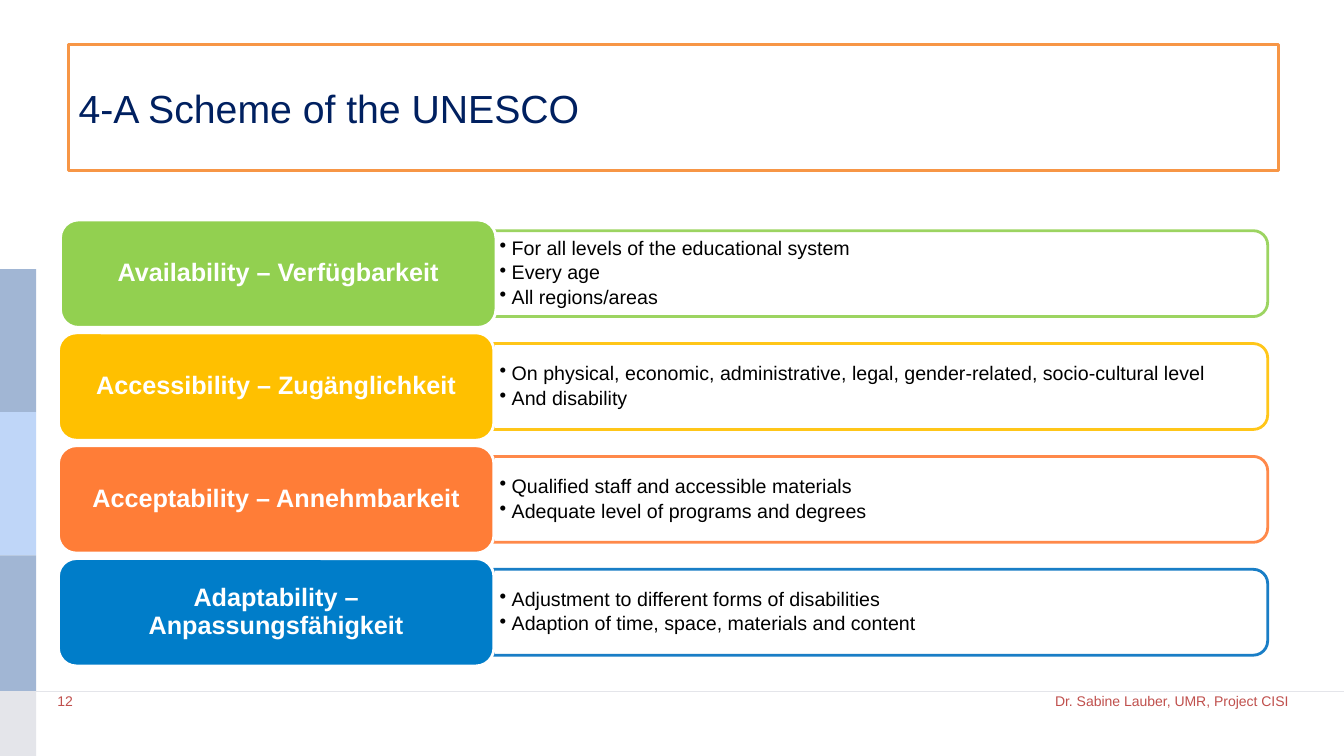
from dataclasses import dataclass
from itertools import pairwise

from lxml.etree import SubElement
from pptx import Presentation
from pptx.dml.color import RGBColor
from pptx.enum.shapes import MSO_CONNECTOR, MSO_SHAPE
from pptx.enum.text import MSO_ANCHOR, PP_ALIGN
from pptx.oxml.ns import qn
from pptx.util import Inches, Pt

FONT = "Arial"
WIDTH, HEIGHT = Inches(13.33), Inches(7.5)


@dataclass(frozen=True)
class Area:
    """A rectangle in percent of the slide's width and height."""
    left: float
    top: float
    width: float
    height: float

    def lengths(self) -> tuple[int, int, int, int]:
        return (across(self.left), down(self.top), across(self.width), down(self.height))


@dataclass(frozen=True)
class Scheme:
    label: str
    points: tuple[str, ...]
    fill: str
    outline: str
    label_left: float = 4.35


SCHEMES = (
    Scheme("Availability – Verfügbarkeit",
           ("For all levels of the educational system", "Every age", "All regions/areas"),
           "92D050", "92D050", 4.5),
    Scheme("Accessibility – Zugänglichkeit",
           ("On physical, economic, administrative, legal, gender-related, socio-cultural level",
            "And disability"),
           "FFC000", "FFC000"),
    Scheme("Acceptability – Annehmbarkeit",
           ("Qualified staff and accessible materials", "Adequate level of programs and degrees"),
           "FF7D37", "FF7D37"),
    Scheme("Adaptability – Anpassungsfähigkeit",
           ("Adjustment to different forms of disabilities",
            "Adaption of time, space, materials and content"),
           "007DC9", "0070C0"),
)
FIRST_MIDDLE, ROW_PITCH = 36.2, 14.93
LABEL_HEIGHT, FRAME_HEIGHT, POINTS_HEIGHT = 14.2, 11.36, 10.3


def across(percent: float) -> int:
    return round(WIDTH * percent / 100)


def down(percent: float) -> int:
    return round(HEIGHT * percent / 100)


def color(value: str) -> RGBColor:
    return RGBColor.from_string(value)


def add_block(page, kind, lengths, fill=None, outline=None, weight=2):
    block = page.shapes.add_shape(kind, *lengths)
    block.shadow.inherit = False
    if fill:
        block.fill.solid()
        block.fill.fore_color.rgb = color(fill)
    else:
        block.fill.background()
    if outline:
        block.line.color.rgb = color(outline)
        block.line.width = Pt(weight)
    else:
        block.line.fill.background()
    return block


def set_margins(frame, side: float, end: float) -> None:
    frame.margin_left = frame.margin_right = Inches(side)
    frame.margin_top = frame.margin_bottom = Inches(end)


def style(para, size: float, ink: str, bold: bool = False, align=PP_ALIGN.LEFT) -> None:
    para.alignment = align
    para.font.name = FONT
    para.font.size = Pt(size)
    para.font.bold = bold
    para.font.color.rgb = color(ink)


def add_bullet(para) -> None:
    properties = para._p.get_or_add_pPr()
    properties.set("marL", str(Inches(0.12)))
    properties.set("indent", str(-Inches(0.12)))
    SubElement(properties, qn("a:buChar")).set("char", "•")


def add_text(page, area: Area):
    box = page.shapes.add_textbox(*area.lengths())
    box.text_frame.word_wrap = True
    return box.text_frame


def draw_sidebar(page) -> None:
    edges = (35.6, 54.53, 73.47, 91.47, 100)
    fills = ("A1B6D4", "BFD6F8", "A1B6D4", "E4E5EA")
    for (top, bottom), fill in zip(pairwise(edges), fills):
        add_block(page, MSO_SHAPE.RECTANGLE, Area(0, top, 2.7, bottom - top).lengths(), fill)
    rule = page.shapes.add_connector(MSO_CONNECTOR.STRAIGHT, 0, down(91.47), WIDTH, down(91.47))
    rule.line.color.rgb = color("E4E5EA")
    rule.line.width = Pt(0.5)
    SubElement(rule._element.spPr, qn("a:effectLst"))


def draw_title(page, text: str) -> None:
    title = page.shapes.title
    title.left, title.top, title.width, title.height = Area(5.1, 5.87, 90, 16.67).lengths()
    title.line.color.rgb = color("F79646")
    title.line.width = Pt(2.25)
    title.text_frame.text = text
    title.text_frame.vertical_anchor = MSO_ANCHOR.MIDDLE
    style(title.text_frame.paragraphs[0], 28, "002060")


def draw_scheme(page, scheme: Scheme, middle: float) -> None:
    # Frame: rounded at the top, then turned a quarter to the right
    left, top, width, height = Area(
        36.72, middle - FRAME_HEIGHT / 2, 57.6, FRAME_HEIGHT).lengths()
    turned = (left + (width - height) // 2, top + (height - width) // 2, height, width)
    frame = add_block(page, MSO_SHAPE.ROUND_2_SAME_RECTANGLE, turned, outline=scheme.outline)
    frame.rotation = 90
    ink = frame.line._ln.find(".//" + qn("a:srgbClr"))
    SubElement(ink, qn("a:alpha")).set("val", "90000")

    # Points
    points = add_text(page, Area(36.72, middle - POINTS_HEIGHT / 2, 57.3, POINTS_HEIGHT))
    points.vertical_anchor = MSO_ANCHOR.MIDDLE
    set_margins(points, 0.06, 0.03)
    points.text = "\n".join(scheme.points)
    for para in points.paragraphs:
        add_bullet(para)
        para.line_spacing = 0.9
        para.space_after = Pt(2.4)
        style(para, 14, "000000")

    # Label
    area = Area(scheme.label_left, middle - LABEL_HEIGHT / 2, 32.4, LABEL_HEIGHT)
    label = add_block(page, MSO_SHAPE.ROUNDED_RECTANGLE, area.lengths(), scheme.fill, "FFFFFF")
    text = label.text_frame
    text.word_wrap = True
    text.vertical_anchor = MSO_ANCHOR.MIDDLE
    set_margins(text, 0.07, 0.04)
    text.text = scheme.label
    text.paragraphs[0].line_spacing = 0.9
    style(text.paragraphs[0], 18, "FFFFFF", True, PP_ALIGN.CENTER)


def draw_footer(page, text: str, area: Area, align) -> None:
    frame = add_text(page, area)
    frame.text = text
    style(frame.paragraphs[0], 10, "C0504D", align=align)


def main() -> None:
    deck = Presentation()
    deck.slide_width, deck.slide_height = WIDTH, HEIGHT
    page = deck.slides.add_slide(deck.slide_layouts.get_by_name("Title Only"))
    draw_sidebar(page)
    draw_title(page, "4-A Scheme of the UNESCO")
    for row, scheme in enumerate(SCHEMES):
        draw_scheme(page, scheme, FIRST_MIDDLE + row * ROW_PITCH)
    draw_footer(page, "Dr. Sabine Lauber, UMR, Project CISI",
                Area(64.95, 90.93, 31.65, 6.93), PP_ALIGN.RIGHT)
    draw_footer(page, "12", Area(3.53, 90.93, 23.33, 6.93), PP_ALIGN.LEFT)
    deck.save("out.pptx")


if __name__ == "__main__":
    main()
